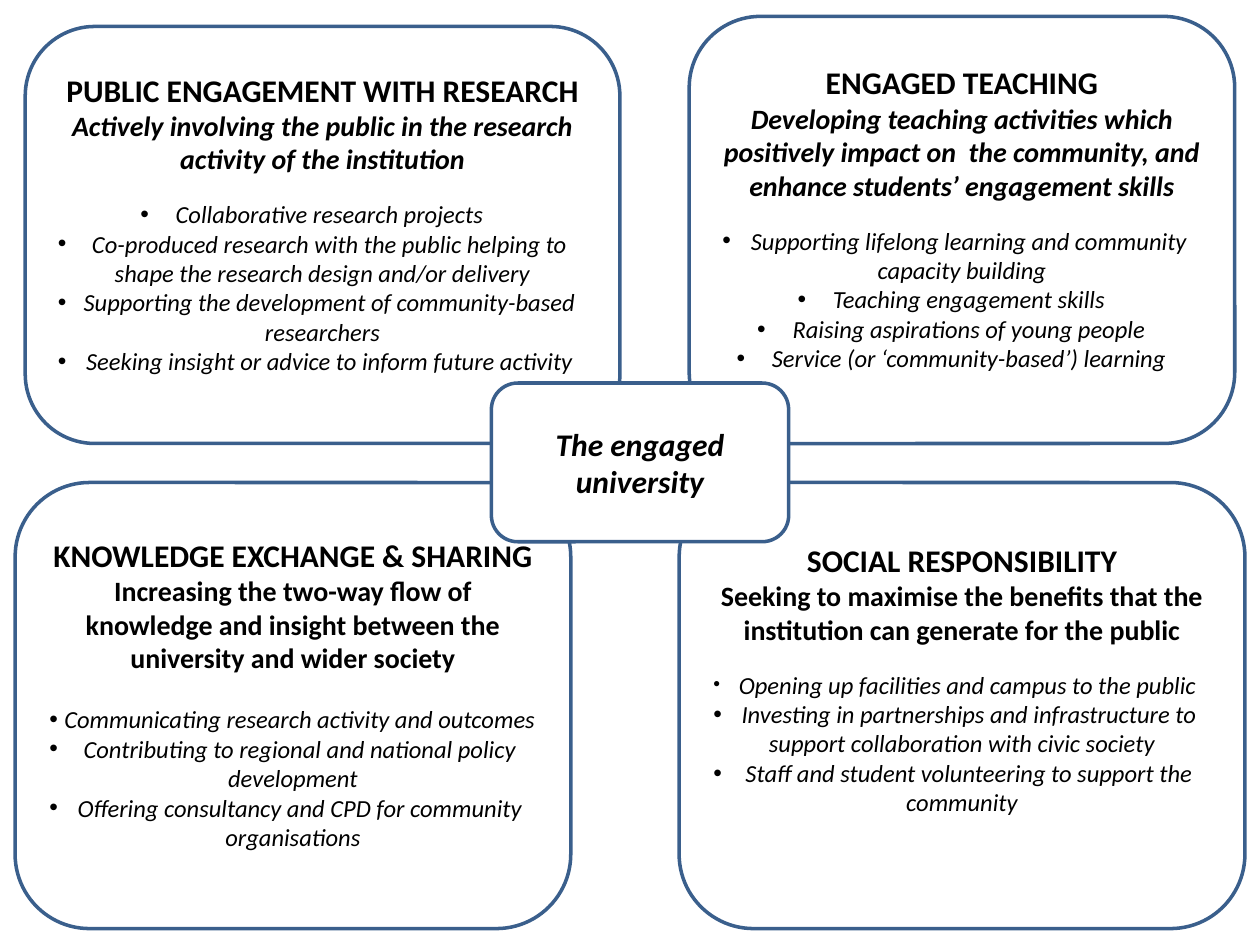
from lxml import etree
from pptx import Presentation
from pptx.dml.color import RGBColor
from pptx.enum.shapes import MSO_SHAPE
from pptx.enum.text import MSO_ANCHOR, PP_ALIGN
from pptx.oxml.ns import qn
from pptx.util import Inches, Pt

ROUNDED = MSO_SHAPE.ROUNDED_RECTANGLE
MIDDLE = MSO_ANCHOR.MIDDLE
CENTER = PP_ALIGN.CENTER

WHITE = RGBColor(0xFF, 0xFF, 0xFF)
BLACK = RGBColor(0x00, 0x00, 0x00)
BLUE = RGBColor(0x3A, 0x5F, 0x8C)
FONT = "Calibri"
INSET = Inches(0.05)

QUADRANTS = [
    dict(
        box=(0.12, 3.83, 4.41, 3.54),
        title="KNOWLEDGE EXCHANGE & SHARING",
        summary="Increasing the two-way flow of knowledge and insight "
                "between the university and wider society",
        items=["Communicating research activity and outcomes",
               "Contributing to regional and national policy development",
               "Offering consultancy and CPD for community organisations"],
        gap=17,
    ),
    dict(
        box=(0.2, 0.21, 4.72, 3.31),
        title="PUBLIC ENGAGEMENT WITH RESEARCH",
        summary="Actively involving the public in the research activity of the institution",
        items=["Collaborative research projects",
               "Co-produced research with the public helping to shape "
               "the research design and/or delivery",
               "Supporting the development of community-based researchers",
               "Seeking insight or advice to inform future activity"],
        summary_italic=True,
    ),
    dict(
        box=(5.47, 0.13, 4.33, 3.39),
        title="ENGAGED TEACHING",
        summary="Developing teaching activities which positively impact on  the community, "
                "and enhance students’ engagement skills",
        items=["Supporting lifelong learning and community capacity building",
               "Teaching engagement skills",
               "Raising aspirations of young people",
               "Service (or ‘community-based’) learning"],
        summary_italic=True,
    ),
    dict(
        box=(5.39, 3.83, 4.49, 3.54),
        title="SOCIAL RESPONSIBILITY",
        summary="Seeking to maximise the benefits that the institution can generate for the public",
        items=["Opening up facilities and campus to the public",
               "Investing in partnerships and infrastructure to support "
               "collaboration with civic society",
               "Staff and student volunteering to support the community"],
        tail=30.5,
        first_bullet=11,
    ),
]


def add_run(p, text, size, bold=False, italic=False):
    """Append a formatted run to a paragraph."""
    r = p.add_run()
    r.text = text
    r.font.name = FONT
    r.font.size = Pt(size)
    r.font.bold = bold
    r.font.italic = italic
    r.font.color.rgb = BLACK


def add_text(tf, text, size, bold=False, italic=False, bullet_size=None, before=0):
    """Add a centred paragraph, bulleted when a bullet size is given."""
    p = tf.paragraphs[0] if not tf.text else tf.add_paragraph()
    p.alignment = CENTER
    p.space_before = Pt(before)
    if bullet_size:
        pPr = p._p.get_or_add_pPr()
        etree.SubElement(pPr, qn("a:buFont")).set("typeface", "Arial")
        etree.SubElement(pPr, qn("a:buChar")).set("char", "•")
        add_run(p, " ", bullet_size, bold, italic)
    add_run(p, text, size, bold, italic)


def add_panel(slide, box):
    """Draw an outlined rounded panel and return its text frame."""
    sp = slide.shapes.add_shape(ROUNDED, *map(Inches, box))
    sp.shadow.inherit = False
    sp.fill.solid()
    sp.fill.fore_color.rgb = WHITE
    sp.line.color.rgb = BLUE
    sp.line.width = Pt(2)
    tf = sp.text_frame
    tf.word_wrap = True
    tf.vertical_anchor = MIDDLE
    return tf


def add_quadrant(slide, box, title, summary, items, summary_italic=False,
                 gap=13.5, tail=13.5, first_bullet=14):
    """Place a panel with a heading, a summary and a bulleted list."""
    tf = add_panel(slide, box)
    tf.margin_bottom = INSET + Pt(tail)
    add_text(tf, title, 18, bold=True)
    add_text(tf, summary, 16, bold=True, italic=summary_italic)
    for i, item in enumerate(items):
        add_text(tf, item, 14, italic=True,
                 bullet_size=14 if i else first_bullet, before=0 if i else gap)


def add_hub(slide, box):
    """Place the central panel that joins the quadrants."""
    add_text(add_panel(slide, box), "The engaged university", 18, bold=True, italic=True)


def main():
    """Build and save the slide."""
    prs = Presentation()
    prs.slide_width, prs.slide_height = Inches(10), Inches(7.5)
    slide = prs.slides.add_slide(prs.slide_layouts[6])
    for quadrant in QUADRANTS:
        add_quadrant(slide, **quadrant)
    add_hub(slide, (3.9, 3.04, 2.36, 1.26))
    prs.save("out.pptx")


if __name__ == "__main__":
    main()
